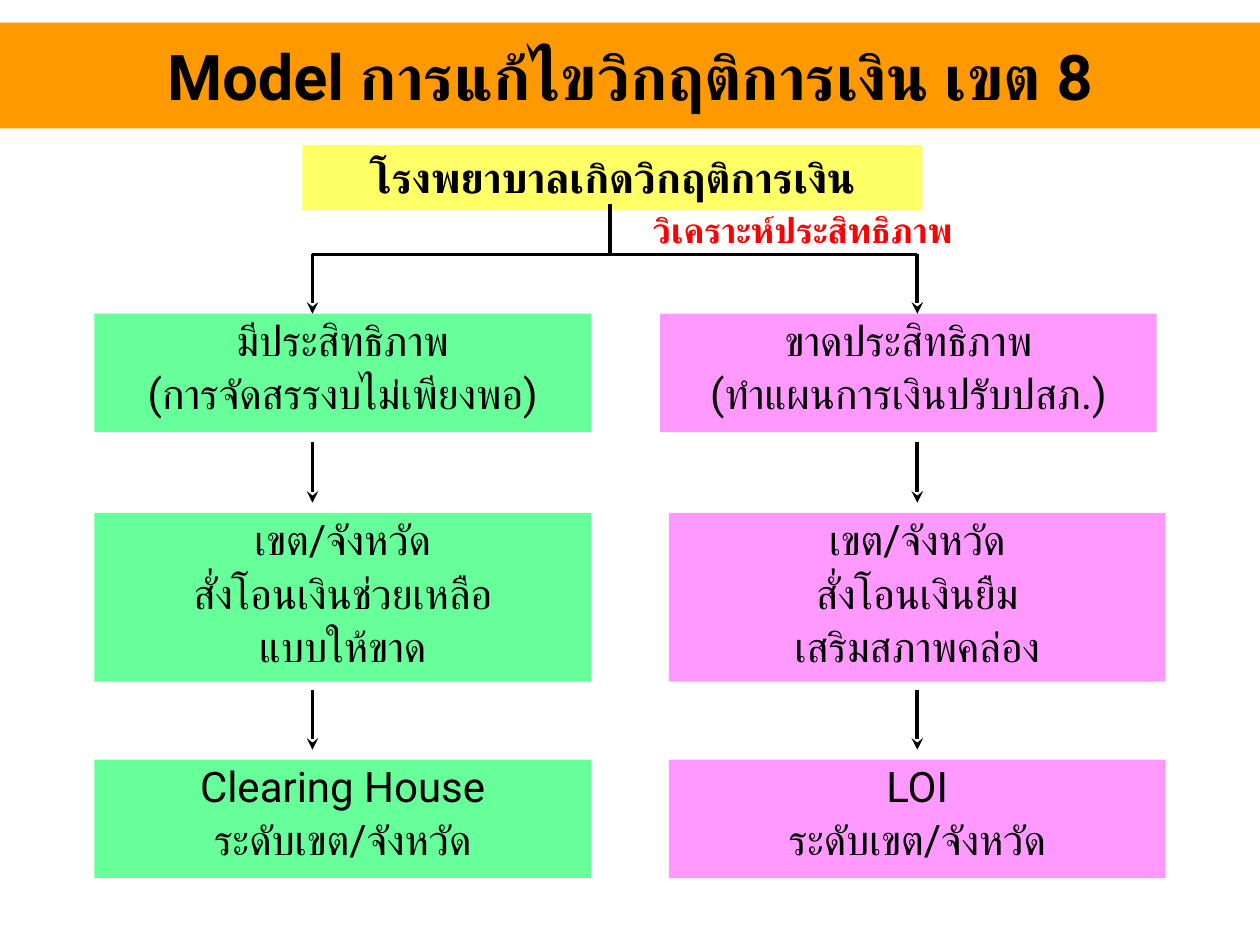
import pptx
import pptx.dml.color
import pptx.enum.shapes
import pptx.enum.text
import pptx.oxml
import pptx.oxml.ns
import pptx.util
from pptx.util import Inches

RGBColor = pptx.dml.color.RGBColor
ANCHOR = pptx.enum.text.MSO_ANCHOR
AUTO_SIZE = pptx.enum.text.MSO_AUTO_SIZE

BLACK = RGBColor(0x00, 0x00, 0x00)
RED = RGBColor(0xFF, 0x00, 0x00)
ORANGE = RGBColor(0xFF, 0x99, 0x00)
YELLOW = RGBColor(0xFF, 0xFF, 0x66)
GREEN = RGBColor(0x66, 0xFF, 0x99)
PINK = RGBColor(0xFF, 0x99, 0xFF)

FONT = "Roboto"
BOX_WIDTH = 3.94
BRANCH_Y = 2.02
STEP_ROWS = [(2.49, 0.94), (4.07, 1.34), (6.03, 0.94)]  # top, height
ARROW_SPANS = [(BRANCH_Y, 2.49), (3.51, 3.99), (5.48, 5.95)]

# Each branch: fill, arrow x, then left edge and lines of every step
BRANCHES = [
    (GREEN, 2.48, [
        (0.75, ["มีประสิทธิภาพ", "(การจัดสรรงบไม่เพียงพอ)"]),
        (0.75, ["เขต/จังหวัด", "สั่งโอนเงินช่วยเหลือ", "แบบให้ขาด"]),
        (0.75, ["Clearing House", "ระดับเขต/จังหวัด"]),
    ]),
    (PINK, 7.28, [
        (5.24, ["ขาดประสิทธิภาพ", "(ทำแผนการเงินปรับปสภ.)"]),
        (5.31, ["เขต/จังหวัด", "สั่งโอนเงินยืม", "เสริมสภาพคล่อง"]),
        (5.31, ["LOI", "ระดับเขต/จังหวัด"]),
    ]),
]


def write_text(frame, lines, size=24, bold=False, color=BLACK,
               spacing=0.9, before=0.2, anchor=ANCHOR.TOP):
    """Write centred lines; before is a share of the text size."""
    frame.word_wrap = True
    frame.vertical_anchor = anchor
    for index, line in enumerate(lines):
        paragraph = frame.paragraphs[0] if index == 0 else frame.add_paragraph()
        paragraph.alignment = pptx.enum.text.PP_ALIGN.CENTER
        paragraph.line_spacing = spacing
        paragraph.space_before = pptx.util.Pt(size * before)
        run = paragraph.add_run()
        run.text = line
        run.font.name = FONT
        run.font.size = pptx.util.Pt(size)
        run.font.bold = bold
        run.font.color.rgb = color
        # Thai letters take the complex-script font
        thai_font = pptx.oxml.parse_xml(
            f'<a:cs {pptx.oxml.ns.nsdecls("a")} typeface="{FONT}"/>')
        run.font._element.append(thai_font)


def add_title(slide, text):
    title = slide.shapes.title
    title.left, title.top = Inches(0), Inches(0.18)
    title.width, title.height = Inches(10), Inches(0.84)
    title.fill.solid()
    title.fill.fore_color.rgb = ORANGE
    write_text(title.text_frame, [text], size=36, bold=True,
               spacing=1.0, before=0, anchor=ANCHOR.MIDDLE)
    title.text_frame.auto_size = AUTO_SIZE.NONE


def add_box(slide, left, top, width, height, fill, lines, **text_format):
    box = slide.shapes.add_shape(
        pptx.enum.shapes.MSO_SHAPE.RECTANGLE,
        Inches(left), Inches(top), Inches(width), Inches(height))
    box.shadow.inherit = False
    box.fill.solid()
    box.fill.fore_color.rgb = fill
    box.line.fill.background()
    write_text(box.text_frame, lines, **text_format)


def add_line(slide, start, end, arrow=False):
    connector = slide.shapes.add_connector(
        pptx.enum.shapes.MSO_CONNECTOR.STRAIGHT,
        *map(Inches, start), *map(Inches, end))
    connector.line.color.rgb = BLACK
    connector.line.width = pptx.util.Pt(2.25)
    namespace = pptx.oxml.ns.nsdecls("a")
    if arrow:
        connector.line._get_or_add_ln().append(
            pptx.oxml.parse_xml(f'<a:tailEnd {namespace} type="stealth"/>'))
    connector._element.spPr.append(
        pptx.oxml.parse_xml(f"<a:effectLst {namespace}/>"))


def add_label(slide, left, top, width, height, text, **text_format):
    label = slide.shapes.add_textbox(
        Inches(left), Inches(top), Inches(width), Inches(height))
    write_text(label.text_frame, [text], **text_format)


def main():
    deck = pptx.Presentation()
    deck.slide_width, deck.slide_height = Inches(10), Inches(7.5)
    slide = deck.slides.add_slide(deck.slide_layouts[5])

    # Heading and starting point
    add_title(slide, "Model การแก้ไขวิกฤติการเงิน เขต 8")
    add_box(slide, 2.4, 1.15, 4.92, 0.52, YELLOW,
            ["โรงพยาบาลเกิดวิกฤติการเงิน"], bold=True, spacing=1.0)

    # Steps of both branches
    for fill, _, steps in BRANCHES:
        for (left, lines), (top, height) in zip(steps, STEP_ROWS):
            add_box(slide, left, top, BOX_WIDTH, height, fill, lines)

    # Fork and arrows
    add_line(slide, (4.84, 1.62), (4.84, BRANCH_Y))
    add_line(slide, (BRANCHES[0][1], BRANCH_Y), (BRANCHES[1][1], BRANCH_Y))
    for _, arrow_x, _ in BRANCHES:
        for start_y, end_y in ARROW_SPANS:
            add_line(slide, (arrow_x, start_y), (arrow_x, end_y), arrow=True)

    # Note on the fork
    add_label(slide, 4.84, 1.64, 3.06, 0.44, "วิเคราะห์ประสิทธิภาพ",
              size=20, bold=True, color=RED)

    deck.save("out.pptx")


if __name__ == "__main__":
    main()
